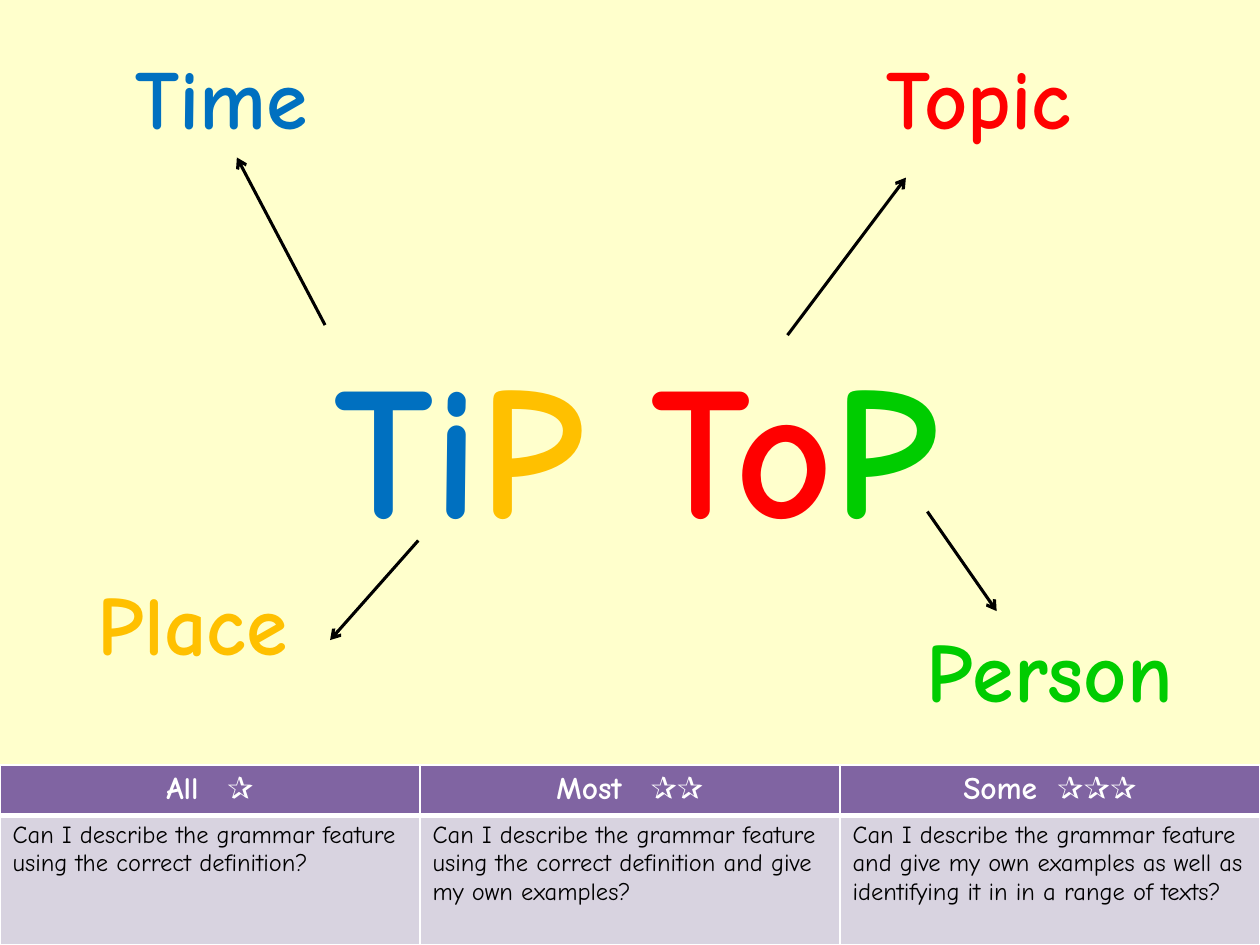
from lxml import etree
from pptx import Presentation
from pptx.dml.color import RGBColor
from pptx.enum.shapes import MSO_CONNECTOR
from pptx.enum.text import MSO_ANCHOR, MSO_AUTO_SIZE, PP_ALIGN
from pptx.oxml.ns import qn
from pptx.util import Inches, Pt

FONT = "Comic Neue"
BLUE, YELLOW, RED, GREEN = "0070C0", "FFC000", "FF0000", "00CC00"
WHITE, BLACK, PURPLE, LILAC = "FFFFFF", "000000", "8064A2", "D8D3E0"

TITLE_PARTS = [("Ti", BLUE), ("P ", YELLOW), ("To", RED), ("P", GREEN)]
# Word, colour, left and top of its box, arrow start, arrow end
WORDS = [
    ("Time", BLUE, 0.55, 0.31, (2.58, 2.58), (1.88, 1.25)),
    ("Place", YELLOW, 0.32, 4.49, (3.32, 4.29), (2.62, 5.08)),
    ("Topic", RED, 6.56, 0.31, (6.25, 2.66), (7.19, 1.41)),
    ("Person", GREEN, 7.12, 4.86, (7.36, 4.06), (7.91, 4.85)),
]
# Heading, stars, extra gap between them in points, question
GOALS = [
    ("All", "✰", 10,
     "Can I describe the grammar feature using the correct definition?"),
    ("Most", "✰✰", 10,
     "Can I describe the grammar feature using the correct definition "
     "and give my own examples?"),
    ("Some", "✰✰✰", 5,
     "Can I describe the grammar feature and give my own examples "
     "as well as identifying it in in a range of texts?"),
]


def color(hex_string):
    return RGBColor.from_string(hex_string)


def add_run(paragraph, text, size, hex_string, bold=True):
    run = paragraph.add_run()
    run.text = text
    run.font.name = FONT
    run.font.size = Pt(size)
    run.font.bold = bold
    run.font.color.rgb = color(hex_string)
    return run


def place_title(slide, left, top, width, height):
    title = slide.shapes.title
    title.left, title.top = Inches(left), Inches(top)
    title.width, title.height = Inches(width), Inches(height)
    text_frame = title.text_frame
    text_frame.auto_size = MSO_AUTO_SIZE.NONE
    text_frame.vertical_anchor = MSO_ANCHOR.MIDDLE
    paragraph = text_frame.paragraphs[0]
    paragraph.alignment = PP_ALIGN.CENTER
    for text, hex_string in TITLE_PARTS:
        add_run(paragraph, text, 108, hex_string)


def add_arrow(slide, start, end):
    points = [Inches(value) for value in (*start, *end)]
    arrow = slide.shapes.add_connector(MSO_CONNECTOR.STRAIGHT, *points)
    arrow.line.color.rgb = color(BLACK)
    arrow.line.width = Pt(1.75)
    etree.SubElement(arrow.line._get_or_add_ln(), qn("a:tailEnd"), type="arrow")
    etree.SubElement(arrow._element.spPr, qn("a:effectLst"))


def add_word(slide, text, hex_string, left, top, width=2.42, height=0.91):
    box = slide.shapes.add_textbox(
        Inches(left), Inches(top), Inches(width), Inches(height))
    text_frame = box.text_frame
    text_frame.word_wrap = True
    text_frame.auto_size = MSO_AUTO_SIZE.SHAPE_TO_FIT_TEXT
    paragraph = text_frame.paragraphs[0]
    paragraph.alignment = PP_ALIGN.CENTER
    add_run(paragraph, text, 48, hex_string)


def format_cell(cell, fill, bottom_width):
    cell.fill.solid()
    cell.fill.fore_color.rgb = color(fill)
    # Borders come before the fill in the cell properties
    properties = cell._tc.get_or_add_tcPr()
    widths = {"a:lnL": 1, "a:lnR": 1, "a:lnT": 1, "a:lnB": bottom_width}
    for index, (tag, width) in enumerate(widths.items()):
        border = etree.Element(qn(tag), w=str(Pt(width)))
        solid_fill = etree.SubElement(border, qn("a:solidFill"))
        etree.SubElement(solid_fill, qn("a:srgbClr"), val=WHITE)
        properties.insert(index, border)


def add_goals_table(slide, left, top, width, row_heights):
    table = slide.shapes.add_table(
        len(row_heights), len(GOALS), Inches(left), Inches(top),
        Inches(width), Inches(sum(row_heights))).table
    for row, height in zip(table.rows, row_heights):
        row.height = Inches(height)
    for index, (heading, stars, gap, question) in enumerate(GOALS):
        # Heading with its stars
        cell = table.cell(0, index)
        format_cell(cell, PURPLE, 3)
        paragraph = cell.text_frame.paragraphs[0]
        paragraph.alignment = PP_ALIGN.CENTER
        add_run(paragraph, heading, 18, WHITE)
        space = add_run(paragraph, " ", 18, WHITE)
        space.font._element.set("spc", str(gap * 100))
        add_run(paragraph, stars, 18, WHITE)
        # Question
        cell = table.cell(1, index)
        format_cell(cell, LILAC, 1)
        add_run(cell.text_frame.paragraphs[0], question, 14, BLACK, bold=False)


def main():
    presentation = Presentation()
    presentation.slide_width, presentation.slide_height = Inches(10), Inches(7.5)
    slide = presentation.slides.add_slide(presentation.slide_layouts[5])
    slide.background.fill.solid()
    slide.background.fill.fore_color.rgb = color("FFFFCC")

    place_title(slide, 0.55, 2.89, 9, 1.25)
    for *_, start, end in WORDS:
        add_arrow(slide, start, end)
    for text, hex_string, left, top, *_ in WORDS:
        add_word(slide, text, hex_string, left, top)
    add_goals_table(slide, 0, 6.07, 10, [0.4, 1.03])
    presentation.save("out.pptx")


if __name__ == "__main__":
    main()
